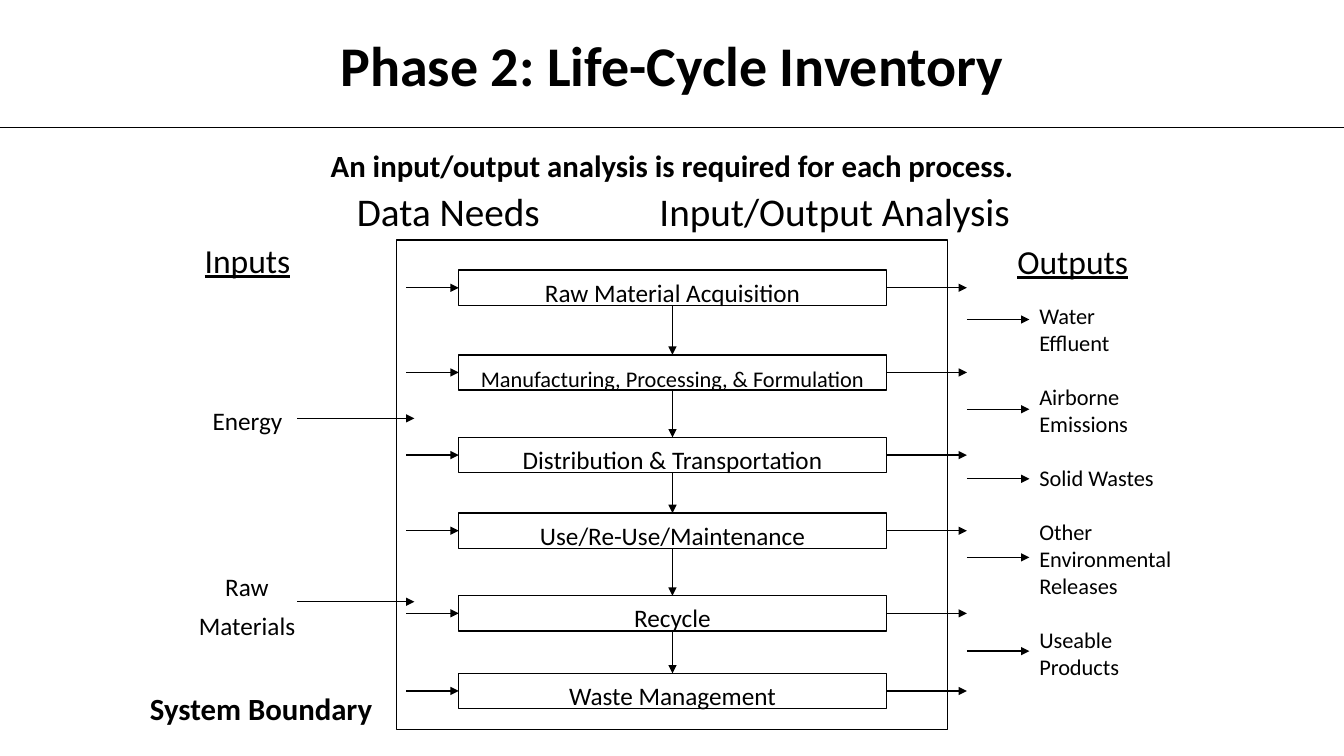
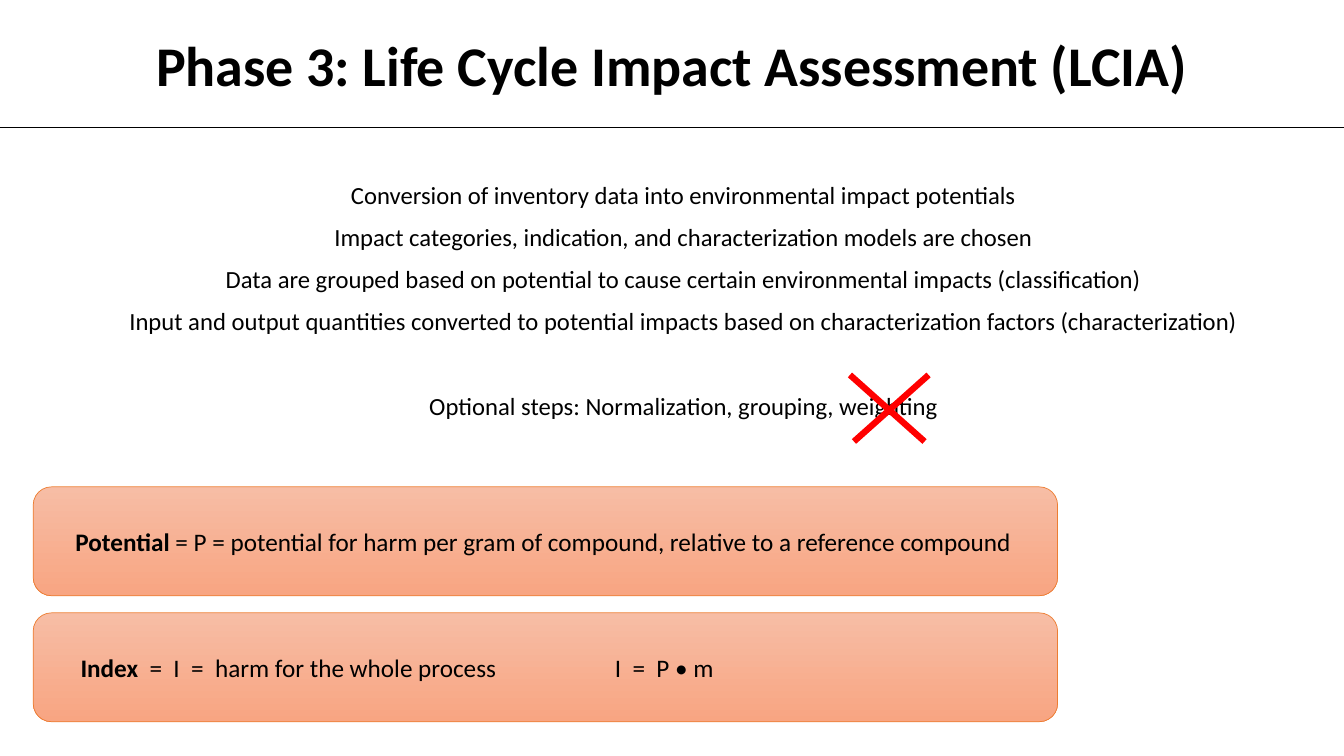
from lxml import etree
from pptx import Presentation
from pptx.dml.color import RGBColor
from pptx.enum.shapes import MSO_CONNECTOR, MSO_SHAPE
from pptx.enum.text import MSO_ANCHOR, PP_ALIGN
from pptx.oxml.ns import qn
from pptx.util import Inches, Pt

BLACK = RGBColor(0x00, 0x00, 0x00)
RED = RGBColor(0xFF, 0x00, 0x00)
ORANGE = RGBColor(0xED, 0x7D, 0x31)
PEACH_TOP = RGBColor(0xF7, 0xBD, 0xA5)
PEACH_BOTTOM = RGBColor(0xF8, 0xA5, 0x82)
FONT = "Calibri"

LEFT, CENTER = PP_ALIGN.LEFT, PP_ALIGN.CENTER
TOP, MIDDLE, BOTTOM = MSO_ANCHOR.TOP, MSO_ANCHOR.MIDDLE, MSO_ANCHOR.BOTTOM
RECTANGLE, ROUNDED = MSO_SHAPE.RECTANGLE, MSO_SHAPE.ROUNDED_RECTANGLE
STRAIGHT = MSO_CONNECTOR.STRAIGHT

SLIDE_WIDTH, SLIDE_HEIGHT = 13.33, 7.5
LABEL_SPACING = Pt(28)

# Process name, distance from the top of the system boundary, text size
PROCESSES = [
    ("Raw Material Acquisition", 0.30, 18),
    ("Manufacturing, Processing, & Formulation", 1.14, 16),
    ("Distribution & Transportation", 1.96, 18),
    ("Use/Re-Use/Maintenance", 2.71, 18),
    ("Recycle", 3.53, 18),
    ("Waste Management", 4.30, 18),
]
# Lines of each output, distance of its arrow from the top of the list
OUTPUTS = [
    (["Water", "Effluent"], 0.22),
    (["Airborne", "Emissions"], 1.11),
    (["Solid Wastes"], 1.80),
    (["Other", "Environmental", "Releases"], 2.58),
    (["Useable", "Products"], 3.51),
]
ASSESSMENT_STEPS = [
    "Conversion of inventory data into environmental impact potentials",
    "Impact categories, indication, and characterization models are chosen",
    "Data are grouped based on potential to cause certain environmental impacts (classification)",
    "Input and output quantities converted to potential impacts based on "
    "characterization factors (characterization)",
    "Optional steps: Normalization, grouping, weighting",
]


# Shared helpers
def set_frame(shape, anchor, side=0.1, edge=0.05):
    frame = shape.text_frame
    frame.word_wrap = True
    frame.vertical_anchor = anchor
    frame.margin_left = frame.margin_right = Inches(side)
    frame.margin_top = frame.margin_bottom = Inches(edge)
    return frame


def add_run(paragraph, text, size, bold=False, underline=False):
    run = paragraph.add_run()
    run.text = text
    run.font.name = FONT
    run.font.size = Pt(size)
    run.font.bold = bold
    run.font.underline = underline
    run.font.color.rgb = BLACK


def add_frame(slide, left, top, width, height, anchor=TOP, side=0.1):
    box = slide.shapes.add_textbox(Inches(left), Inches(top), Inches(width), Inches(height))
    return set_frame(box, anchor, side)


def add_label(slide, text, left, top, width, height, size, anchor=TOP,
              align=CENTER, spacing=LABEL_SPACING, side=0.1, **style):
    frame = add_frame(slide, left, top, width, height, anchor, side)
    paragraph = frame.paragraphs[0]
    paragraph.alignment = align
    paragraph.line_spacing = spacing
    add_run(paragraph, text, size, **style)
    return paragraph


def add_line(slide, start, end, color=BLACK, weight=1, arrow=False):
    line = slide.shapes.add_connector(STRAIGHT, *(Inches(value) for value in start + end))
    line.line.color.rgb = color
    line.line.width = Pt(weight)
    if arrow:
        etree.SubElement(line.line._get_or_add_ln(), qn("a:tailEnd"), type="triangle")
    etree.SubElement(line._element.spPr, qn("a:effectLst"))


def add_box(slide, kind, left, top, width, height, color=BLACK, weight=1):
    shape = slide.shapes.add_shape(
        kind, Inches(left), Inches(top), Inches(width), Inches(height))
    shape.shadow.inherit = False
    shape.fill.background()
    shape.line.color.rgb = color
    shape.line.width = Pt(weight)
    return shape


def add_titled_slide(presentation, title):
    slide = presentation.slides.add_slide(presentation.slide_layouts[6])
    add_label(slide, title, 1, 0.32, SLIDE_WIDTH - 2, 0.71, 40, MIDDLE,
              spacing=0.9, bold=True)
    add_line(slide, (0, 1.26), (SLIDE_WIDTH, 1.26), weight=0.5)
    return slide


# Inventory slide
def add_headings(slide, left, top, width):
    add_label(slide, "An input/output analysis is required for each process.",
              left, top, width, 0.46, 22, MIDDLE, spacing=0.9, bold=True)
    paragraph = add_label(slide, "", left + 0.75, top + 0.56, width - 1.2, 0.38, 28,
                          BOTTOM, LEFT, Pt(20), side=0)
    tabs = etree.SubElement(paragraph._p.get_or_add_pPr(), qn("a:tabLst"))
    etree.SubElement(tabs, qn("a:tab"), pos=str(Inches(3)), algn="l")
    add_run(paragraph, "Data Needs\tInput/Output Analysis", 28)


def add_process_chain(slide, left, top, width, height):
    add_box(slide, RECTANGLE, left, top, width, height)
    box_left, box_width, box_height = left + 0.62, 4.24, 0.35
    box_right, middle = box_left + box_width, box_left + box_width / 2
    previous_bottom = None
    for name, offset, size in PROCESSES:
        box_top = top + offset
        center = box_top + box_height / 2
        box = add_box(slide, RECTANGLE, box_left, box_top, box_width, box_height)
        paragraph = set_frame(box, MIDDLE, edge=0).paragraphs[0]
        paragraph.alignment = CENTER
        paragraph.line_spacing = LABEL_SPACING
        add_run(paragraph, name, size)
        add_line(slide, (left + 0.1, center), (box_left, center), arrow=True)
        add_line(slide, (box_right, center), (left + width + 0.19, center), arrow=True)
        if previous_bottom is not None:
            add_line(slide, (middle, previous_bottom), (middle, box_top), arrow=True)
        previous_bottom = box_top + box_height


def add_inputs(slide, left, top):
    add_label(slide, "Inputs", left + 0.07, top, 1.13, 0.49, 24, underline=True)
    add_label(slide, "Energy", left + 0.17, top + 1.54, 0.93, 0.46, 18)
    add_label(slide, "Raw Materials", left, top + 3.19, 1.26, 0.88, 18)
    for offset in (1.81, 3.63):
        add_line(slide, (left + 1.13, top + offset), (left + 2.29, top + offset), arrow=True)


def add_outputs(slide, left, top):
    add_label(slide, "Outputs", left - 0.27, top - 0.61, 1.4, 0.5, 24,
              spacing=1.0, underline=True)
    frame = add_frame(slide, left, top, 1.54, 3.87)
    paragraph = frame.paragraphs[0]
    for group, (lines, offset) in enumerate(OUTPUTS):
        for index, line in enumerate(lines):
            if group or index:
                paragraph = frame.add_paragraph()
            if group and index == 0:
                paragraph.space_before = Pt(19.5)
            add_run(paragraph, line, 16)
        add_line(slide, (left - 0.62, top + offset), (left, top + offset), arrow=True)


def build_inventory(presentation):
    slide = add_titled_slide(presentation, "Phase 2: Life-Cycle Inventory")
    add_headings(slide, 2.79, 1.43, 7.75)
    add_process_chain(slide, 3.93, 2.38, 5.47, 4.86)
    add_inputs(slide, 1.82, 2.34)
    add_outputs(slide, 10.21, 2.95)
    add_label(slide, "System Boundary", 1.11, 6.77, 2.96, 0.49, 22, MIDDLE, bold=True)


# Impact assessment slide
def add_steps(slide, left, top, width, height):
    frame = add_frame(slide, left, top, width, height, side=0)
    for index, step in enumerate(ASSESSMENT_STEPS):
        paragraph = frame.add_paragraph() if index else frame.paragraphs[0]
        paragraph._p.get_or_add_pPr().set("marL", str(Inches(0.22)))
        paragraph.alignment = CENTER
        paragraph.line_spacing = 1.14
        paragraph.space_after = Pt(4)
        if index:
            optional = step == ASSESSMENT_STEPS[-1]
            paragraph.space_before = Pt(32.5 if optional else 2)
        add_run(paragraph, step, 17.6)


def add_cross(slide, left, top, width, height):
    right, bottom = left + width, top + height
    add_line(slide, (left, top), (right - 0.04, bottom), RED, 4.5)
    add_line(slide, (right, top), (left + 0.04, bottom), RED, 4.5)


def add_definition(slide, left, top, indent, term, meaning, formula=None):
    width, height = 10.16, 1.08
    panel = add_box(slide, ROUNDED, left, top, width, height, ORANGE, 0.5)
    panel.fill.gradient()
    panel.fill.gradient_angle = 270
    for stop, color in zip(panel.fill.gradient_stops, (PEACH_TOP, PEACH_BOTTOM)):
        stop.color.rgb = color
    text_top = top + 0.34
    paragraph = add_label(slide, term, left + indent, text_top, width - indent, 0.4, 18,
                          align=LEFT, spacing=1.0, bold=True)
    add_run(paragraph, meaning, 18)
    if formula:
        add_label(slide, formula, left + 5.67, text_top, 1.33, 0.4, 18,
                  align=LEFT, spacing=1.0)


def build_assessment(presentation):
    slide = add_titled_slide(presentation, "Phase 3: Life Cycle Impact Assessment (LCIA)")
    add_steps(slide, 0.7, 1.69, 11.94, 2.75)
    add_cross(slide, 8.43, 3.72, 0.78, 0.66)
    add_definition(slide, 0.33, 4.83, 0.32, "Potential",
                   " = P = potential for harm per gram of compound, "
                   "relative to a reference compound")
    add_definition(slide, 0.33, 6.08, 0.37, "Index",
                   "  =  I  =  harm for the whole process", "I  =  P • m")


def main():
    presentation = Presentation()
    presentation.slide_width = Inches(SLIDE_WIDTH)
    presentation.slide_height = Inches(SLIDE_HEIGHT)
    build_inventory(presentation)
    build_assessment(presentation)
    presentation.save("out.pptx")


if __name__ == "__main__":
    main()
